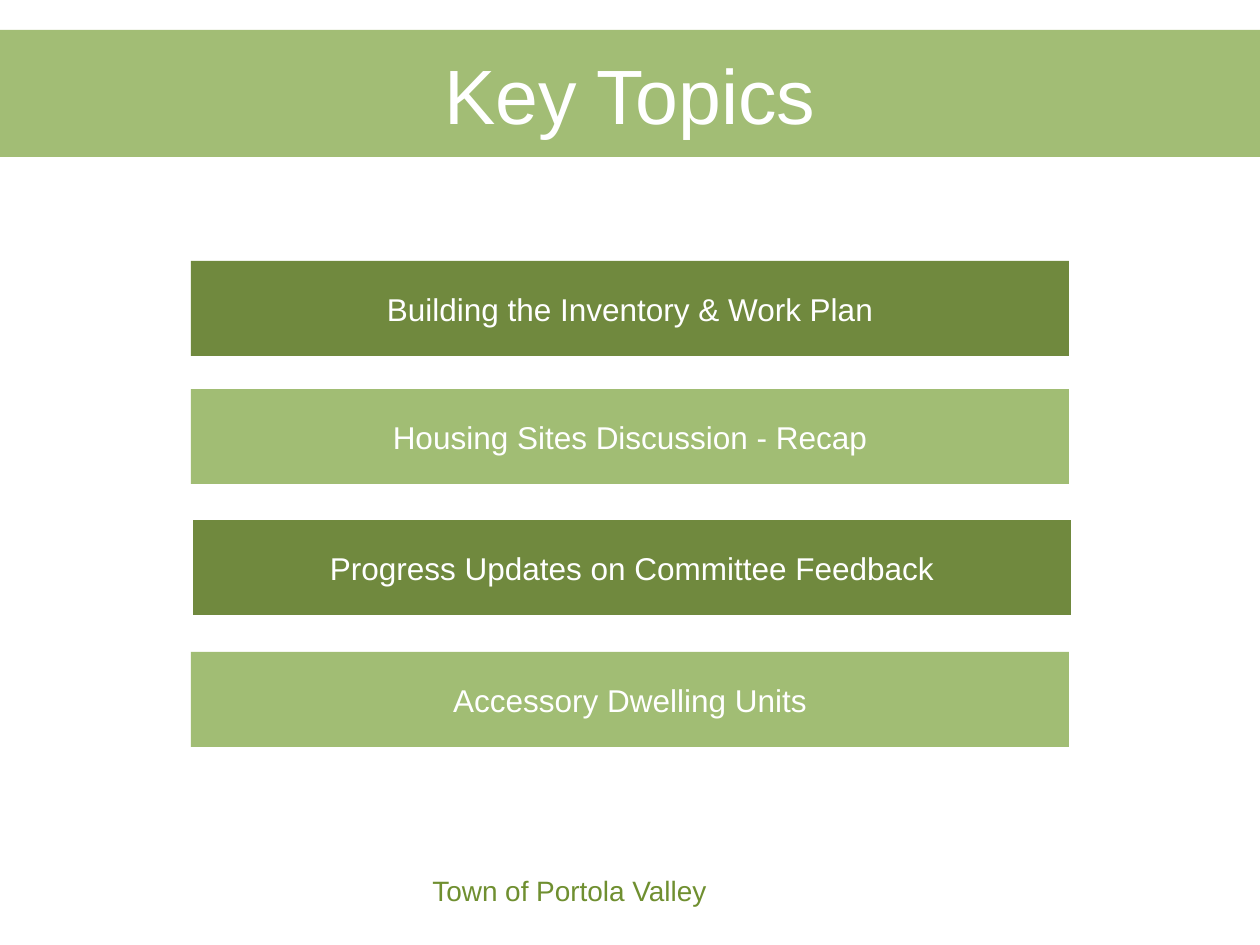
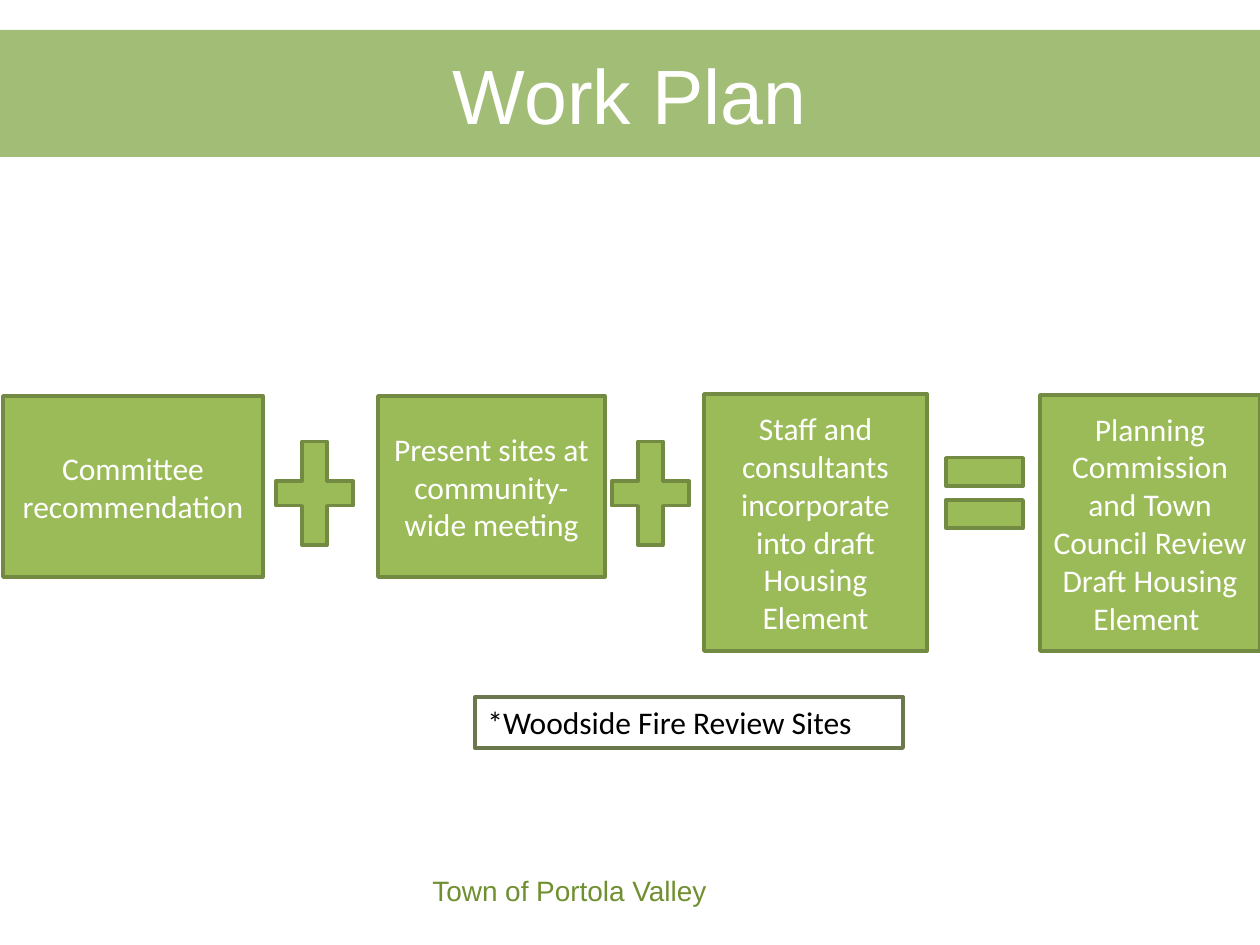
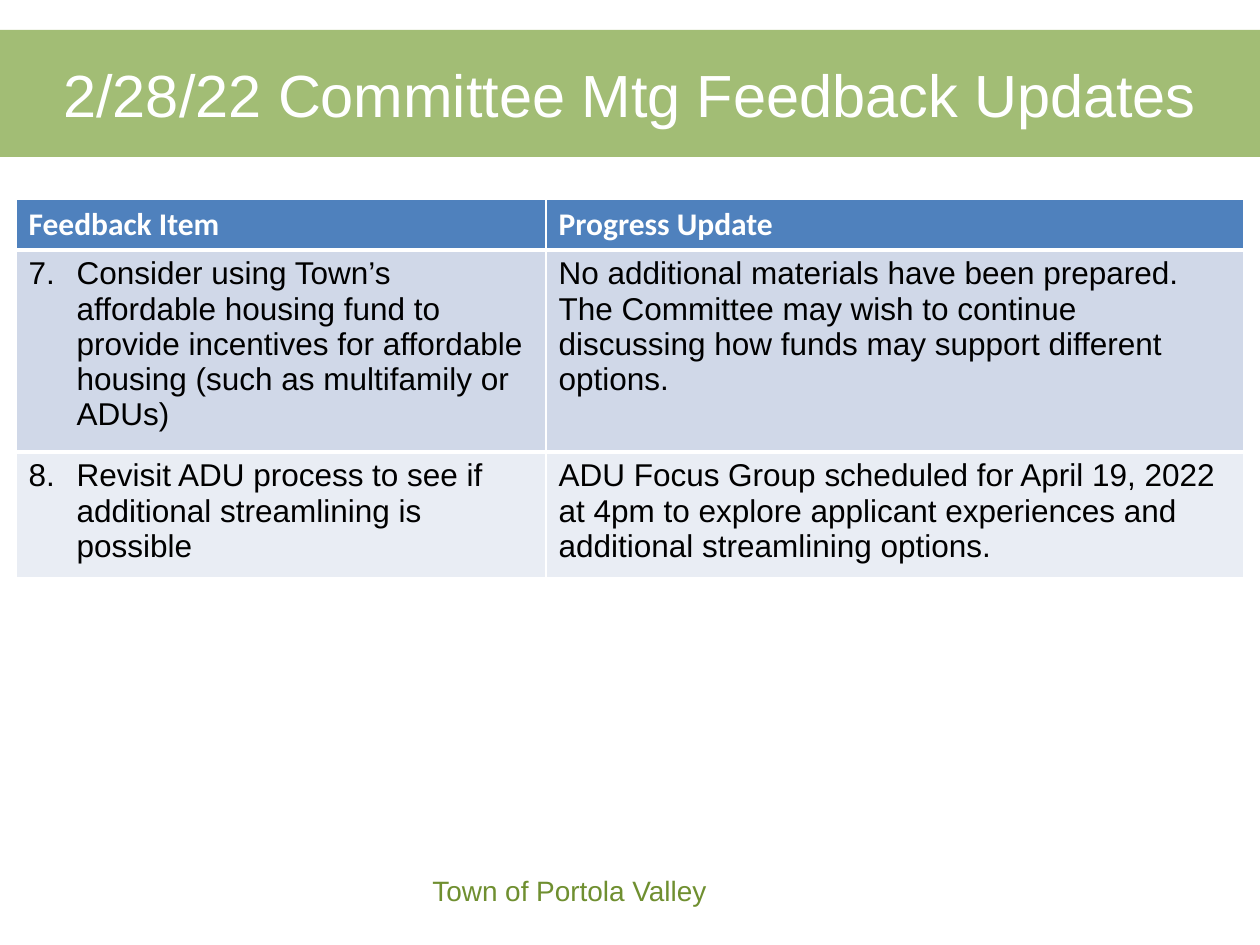
from lxml import etree
from pptx import Presentation
from pptx import util as u
from pptx.dml.color import RGBColor
from pptx.enum import shapes, text
from pptx.oxml.ns import qn

SCALE = 914400 / 126
WHITE = RGBColor(0xFF, 0xFF, 0xFF)
BLACK = RGBColor(0, 0, 0)
BAND = RGBColor(0xA2, 0xBD, 0x75)
LIGHT = RGBColor(0xA1, 0xBD, 0x74)
DARK = RGBColor(0x70, 0x89, 0x3E)
FOOT = RGBColor(0x6F, 0x8F, 0x30)
STEP = RGBColor(0x9B, 0xBB, 0x59)
EDGE = RGBColor(0x73, 0x8A, 0x42)
NOTE = RGBColor(0x6B, 0x78, 0x4E)
HEAD = RGBColor(0x4F, 0x81, 0xBD)
ROWS = RGBColor(0xD0, 0xD8, 0xE8), RGBColor(0xE9, 0xED, 0xF4)
SHAPE = shapes.MSO_SHAPE
ALIGN = text.PP_ALIGN
MIDDLE = text.MSO_ANCHOR.MIDDLE


def px(*sizes):
    """Turn pixel lengths into EMU."""
    return [u.Emu(round(size * SCALE)) for size in sizes]


def number(para, start):
    """Number a paragraph with a hanging indent."""
    props = para._p.get_or_add_pPr()
    indent = px(48)[0]
    props.set("marL", str(indent))
    props.set("indent", str(-indent))
    etree.SubElement(props, qn("a:buFont"), typeface="+mj-lt")
    etree.SubElement(props, qn("a:buAutoNum"), type="arabicPeriod", startAt=str(start))


def write(frame, words, size, color, face="Arial", align=ALIGN.CENTER, bold=False, start=None):
    """Fill a text frame with one styled paragraph, numbered if a start is given."""
    frame.text = words
    frame.word_wrap = True
    para = frame.paragraphs[0]
    para.alignment = align
    if start:
        number(para, start)
    font = para.font
    font.name, font.size, font.bold = face, u.Pt(size), bold
    font.color.rgb = color


def shape(slide, kind, box, fill=None, edge=None, width=2):
    """Add a flat preset shape, with an outline if an edge colour is given."""
    item = slide.shapes.add_shape(kind, *px(*box))
    item.shadow.inherit = False
    if fill is None:
        item.fill.background()
    else:
        item.fill.solid()
        item.fill.fore_color.rgb = fill
    if edge is None:
        item.line.fill.background()
    else:
        item.line.color.rgb = edge
        item.line.width = u.Pt(width)
    return item


def label(item, words, face):
    """Centre white text in a shape."""
    write(item.text_frame, words, 18, WHITE, face)
    item.text_frame.vertical_anchor = MIDDLE


def page(deck, words, size=44, left=63):
    """Add a slide with title band and footer."""
    slide = deck.slides.add_slide(deck.slide_layouts[5])
    band = shape(slide, SHAPE.RECTANGLE, (0, 30, 1260, 127), BAND)
    title = slide.shapes.title
    band._element.addnext(title._element)
    title.left, title.top, title.width, title.height = px(left, 30, 1260 - 2 * left, 127)
    write(title.text_frame, words, size, WHITE)
    title.text_frame.vertical_anchor = MIDDLE
    title.text_frame.auto_size = text.MSO_AUTO_SIZE.NONE
    foot = slide.shapes.add_textbox(*px(420, 867, 315, 47))
    write(foot.text_frame, "Town of Portola Valley", 16, FOOT, align=ALIGN.LEFT)
    return slide


def rule(box, side):
    """Give one side of a table cell a thick white line."""
    line = etree.Element(qn(f"a:{side}"), w=str(u.Pt(3)))
    fill = etree.SubElement(line, qn("a:solidFill"))
    etree.SubElement(fill, qn("a:srgbClr"), val=str(WHITE))
    box._tc.get_or_add_tcPr().insert(0, line)


def cell(box, words, fill, color=BLACK, face="Arial", bold=False, start=None):
    """Fill one table cell."""
    box.fill.solid()
    box.fill.fore_color.rgb = fill
    write(box.text_frame, words, 18, color, face, ALIGN.LEFT, bold, start)


def topics(deck):
    """Build the list of key topics."""
    slide = page(deck, "Key Topics")
    bars = [
        (191, 261, DARK, "Building the Inventory & Work Plan"),
        (191, 389, LIGHT, "Housing Sites Discussion - Recap"),
        (193, 520, DARK, "Progress Updates on Committee Feedback"),
        (191, 652, LIGHT, "Accessory Dwelling Units"),
    ]
    for left, top, fill, words in bars:
        bar = shape(slide, SHAPE.RECTANGLE, (left, top, 878, 95), fill)
        label(bar, words, "Arial")


def plan(deck):
    """Build the work plan as a sum of steps."""
    slide = page(deck, "Work Plan")
    steps = [
        ((3, 396, 260, 181), "Committee recommendation"),
        ((378, 396, 227, 181), "Present sites at community-wide meeting"),
        ((704, 394, 223, 257), "Staff and consultants incorporate into draft Housing Element"),
        ((1040, 395, 220, 256),
         "Planning Commission and Town Council Review Draft Housing Element "),
    ]
    for box, words in steps:
        label(shape(slide, SHAPE.RECTANGLE, box, STEP, EDGE), words, "Calibri")
    signs = [
        (SHAPE.MATH_PLUS, (262, 423, 105, 141)),
        (SHAPE.MATH_PLUS, (598, 423, 105, 141)),
        (SHAPE.MATH_EQUAL, (932, 433, 105, 120)),
    ]
    for kind, box in signs:
        shape(slide, kind, box, STEP, EDGE)
    note = shape(slide, SHAPE.RECTANGLE, (475, 697, 428, 51), edge=NOTE, width=2.25)
    write(note.text_frame, "*Woodside Fire Review Sites", 18, BLACK, "Calibri", ALIGN.LEFT)
    note.text_frame.vertical_anchor = text.MSO_ANCHOR.TOP


def updates(deck):
    """Build the table of feedback and progress."""
    slide = page(deck, "2/28/22 Committee Mtg Feedback Updates", 34, 16)
    items = [
        ("Consider using Town’s affordable housing fund to provide incentives for "
         "affordable housing (such as multifamily or ADUs)",
         "No additional materials have been prepared. The Committee may wish to "
         "continue discussing how funds may support different options."),
        ("Revisit ADU process to see if additional streamlining is possible",
         "ADU Focus Group scheduled for April 19, 2022 at 4pm to explore applicant "
         "experiences and additional streamlining options."),
    ]
    grid = slide.shapes.add_table(3, 2, *px(16, 199, 1228, 379)).table
    for col, width in zip(grid.columns, px(530, 698)):
        col.width = width
    for row, height in zip(grid.rows, px(51, 202, 126)):
        row.height = height
    for col, words in enumerate(("Feedback Item", "Progress Update")):
        cell(grid.cell(0, col), words, HEAD, WHITE, "Calibri", True)
        rule(grid.cell(0, col), "lnB")
        rule(grid.cell(1, col), "lnT")
    for row, ((item, news), fill) in enumerate(zip(items, ROWS), 1):
        cell(grid.cell(row, 0), item, fill, start=row + 6)
        cell(grid.cell(row, 1), news, fill)


def main():
    """Build and save the deck."""
    deck = Presentation()
    deck.slide_width, deck.slide_height = px(1260, 945)
    topics(deck)
    plan(deck)
    updates(deck)
    deck.save("out.pptx")


if __name__ == "__main__":
    main()
